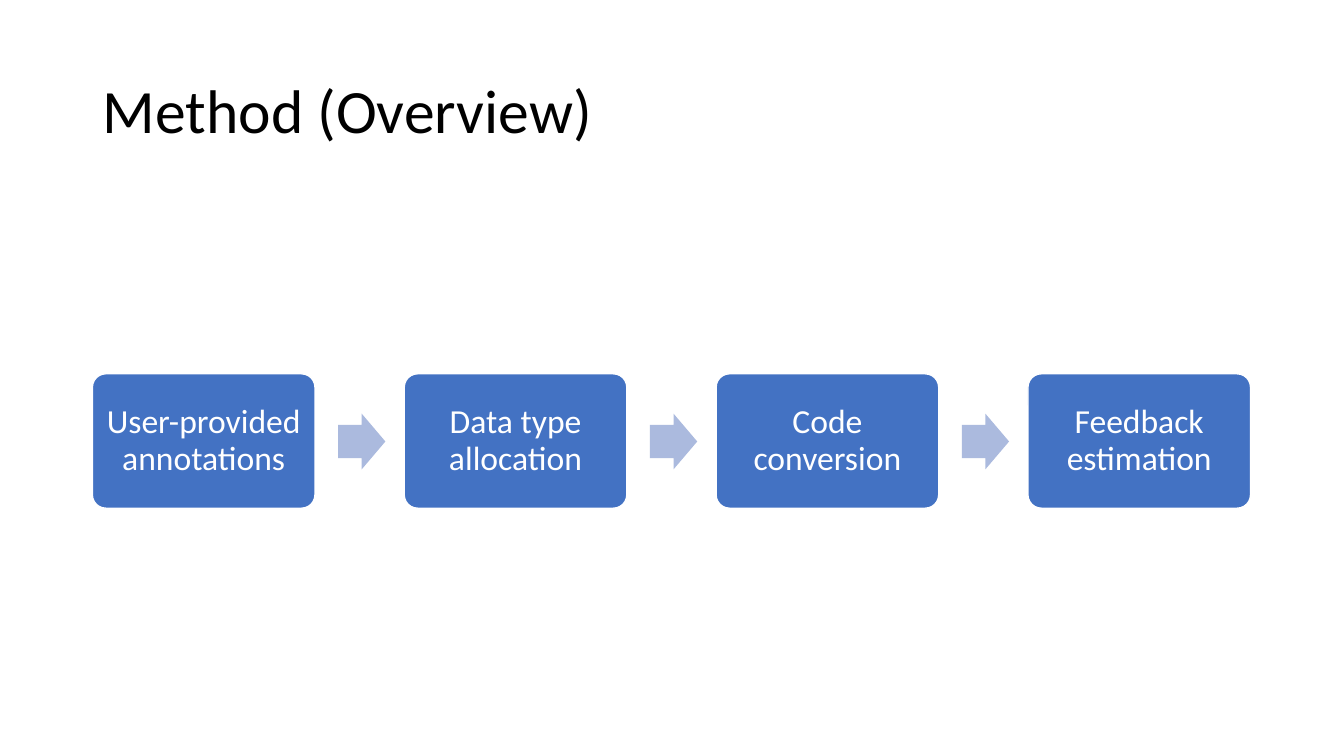
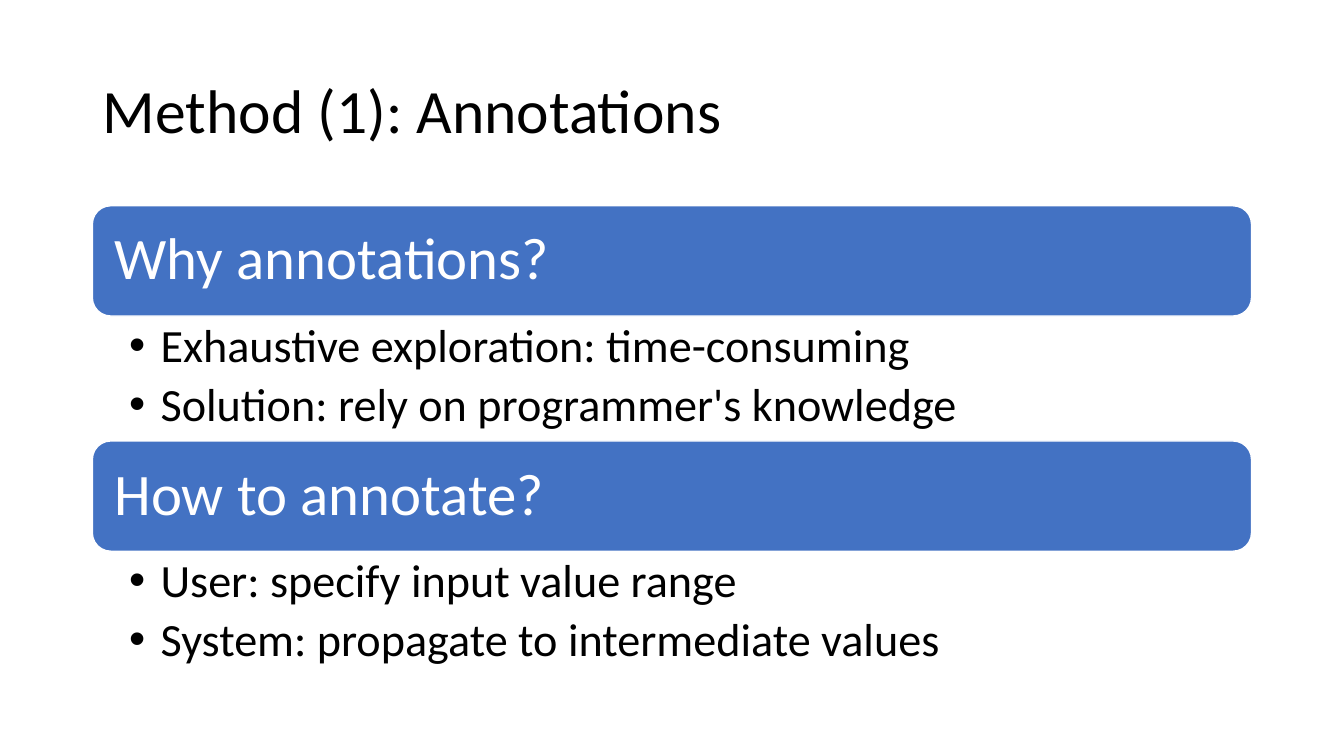
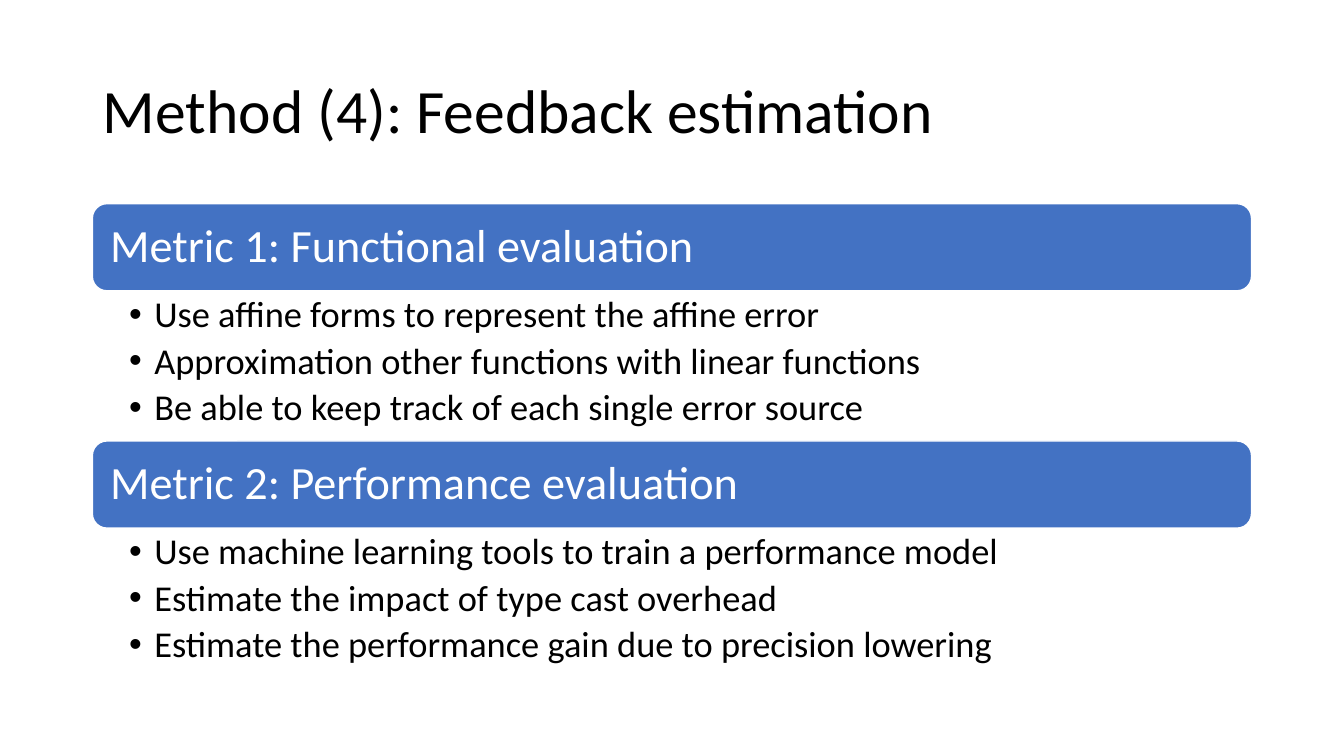
from pptx import Presentation
from pptx.dml.color import RGBColor
from pptx.enum.shapes import MSO_SHAPE
from pptx.enum.text import MSO_ANCHOR, PP_ALIGN
from pptx.oxml.ns import qn
from pptx.util import Emu, Pt
from lxml.etree import SubElement

PX = 9525  # EMU in one px, 96 px to the inch


def px(n):
    return Emu(n * PX)


def color(code):
    return RGBColor.from_string(code)


def bullet(para, indent):
    """Give the paragraph a hanging round bullet."""
    props = para._p.get_or_add_pPr()
    props.set("marL", str(px(indent)))
    props.set("indent", str(-px(indent)))
    SubElement(props, qn("a:buFont")).set("typeface", "Arial")
    SubElement(props, qn("a:buChar")).set("char", "•")


def write(shape, lines, size, ink, align=PP_ALIGN.LEFT, anchor=MSO_ANCHOR.MIDDLE,
          inset=(10, 5, 10, 5), gap=0, indent=0, font="Calibri"):
    """Fill the shape with one paragraph a line; inset is left, top, right, bottom."""
    frame = shape.text_frame
    frame.word_wrap = True
    frame.vertical_anchor = anchor
    (frame.margin_left, frame.margin_top,
     frame.margin_right, frame.margin_bottom) = map(px, inset)
    for i, line in enumerate(lines):
        para = frame.paragraphs[0] if i == 0 else frame.add_paragraph()
        para.alignment = align
        para.line_spacing = 0.9
        para.space_before = Pt(gap if i else 0)
        if indent:
            bullet(para, indent)
        run = para.add_run()
        run.text = line
        run.font.size = Pt(size)
        run.font.name = font
        run.font.color.rgb = color(ink)


class Deck:
    BLUE, PALE, WHITE, BLACK = "4372C3", "ABBADE", "FFFFFF", "000000"
    LEFT, WIDTH = 88, 1104

    def __init__(self):
        self.file = Presentation()
        self.file.slide_width = px(1280)
        self.file.slide_height = px(720)
        self.slide = None

    def page(self, title):
        """Start a slide with its title."""
        self.slide = self.file.slides.add_slide(self.file.slide_layouts[6])
        write(self.label(39, 139), [title], 44, self.BLACK)

    def label(self, top, high):
        """Add a text box over the full content width."""
        area = map(px, (self.LEFT, top, self.WIDTH, high))
        return self.slide.shapes.add_textbox(*area)

    def shape(self, kind, area, fill, adjust):
        shape = self.slide.shapes.add_shape(kind, *map(px, area))
        shape.shadow.inherit = False
        shape.fill.solid()
        shape.fill.fore_color.rgb = color(fill)
        shape.line.fill.background()
        for i, value in enumerate(adjust):
            shape.adjustments[i] = value
        return shape

    def box(self, area, text, size, curve, align):
        """Add a rounded blue box with white text."""
        box = self.shape(MSO_SHAPE.ROUNDED_RECTANGLE, area, self.BLUE, [curve])
        box.line.color.rgb = color(self.WHITE)
        box.line.width = Pt(1)
        write(box, [text], size, self.WHITE, align=align, inset=[int(size * 0.4)] * 4)

    def flow(self, steps):
        """Add a row of boxes with an arrow between neighbours."""
        top, wide, high, pitch = 356, 212, 128, 297
        for i, step in enumerate(steps):
            left = self.LEFT + i * pitch
            if i:
                self.shape(MSO_SHAPE.RIGHT_ARROW, (left - 63, top + 38, 45, 53),
                           self.PALE, [0.6, 0.5])
            self.box((left, top, wide, high), step, 24, 0.1, PP_ALIGN.CENTER)

    def topics(self, groups, top, bar, body, head, size, inset, indent):
        """Stack bars, each with a bullet list below it."""
        for name, points in groups:
            self.box((self.LEFT, top, self.WIDTH, bar), name, head, 0.167, PP_ALIGN.LEFT)
            write(self.label(top + bar, body), points, size, self.BLACK,
                  anchor=MSO_ANCHOR.TOP, inset=inset, gap=size * 0.2, indent=indent)
            top += bar + body


def main():
    deck = Deck()

    deck.page("Method (Overview)")
    deck.flow(["User-provided annotations", "Data type allocation",
               "Code conversion", "Feedback estimation"])

    deck.page("Method (1): Annotations")
    deck.topics([
        ("Why annotations?", ["Exhaustive exploration: time-consuming",
                              "Solution: rely on programmer's knowledge"]),
        ("How to annotate?", ["User: specify input value range",
                              "System: propagate to intermediate values"]),
    ], top=196, bar=105, body=119, head=42, size=33, inset=(35, 6, 32, 6), indent=30)

    deck.page("Method (4): Feedback estimation")
    deck.topics([
        ("Metric 1: Functional evaluation", [
            "Use affine forms to represent the affine error",
            "Approximation other functions with linear functions",
            "Be able to keep track of each single error source"]),
        ("Metric 2: Performance evaluation", [
            "Use machine learning tools to train a performance model",
            "Estimate the impact of type cast overhead",
            "Estimate the performance gain due to precision lowering"]),
    ], top=194, bar=83, body=143, head=33, size=26, inset=(35, 5, 25, 5), indent=24)

    deck.file.save("out.pptx")


if __name__ == "__main__":
    main()
